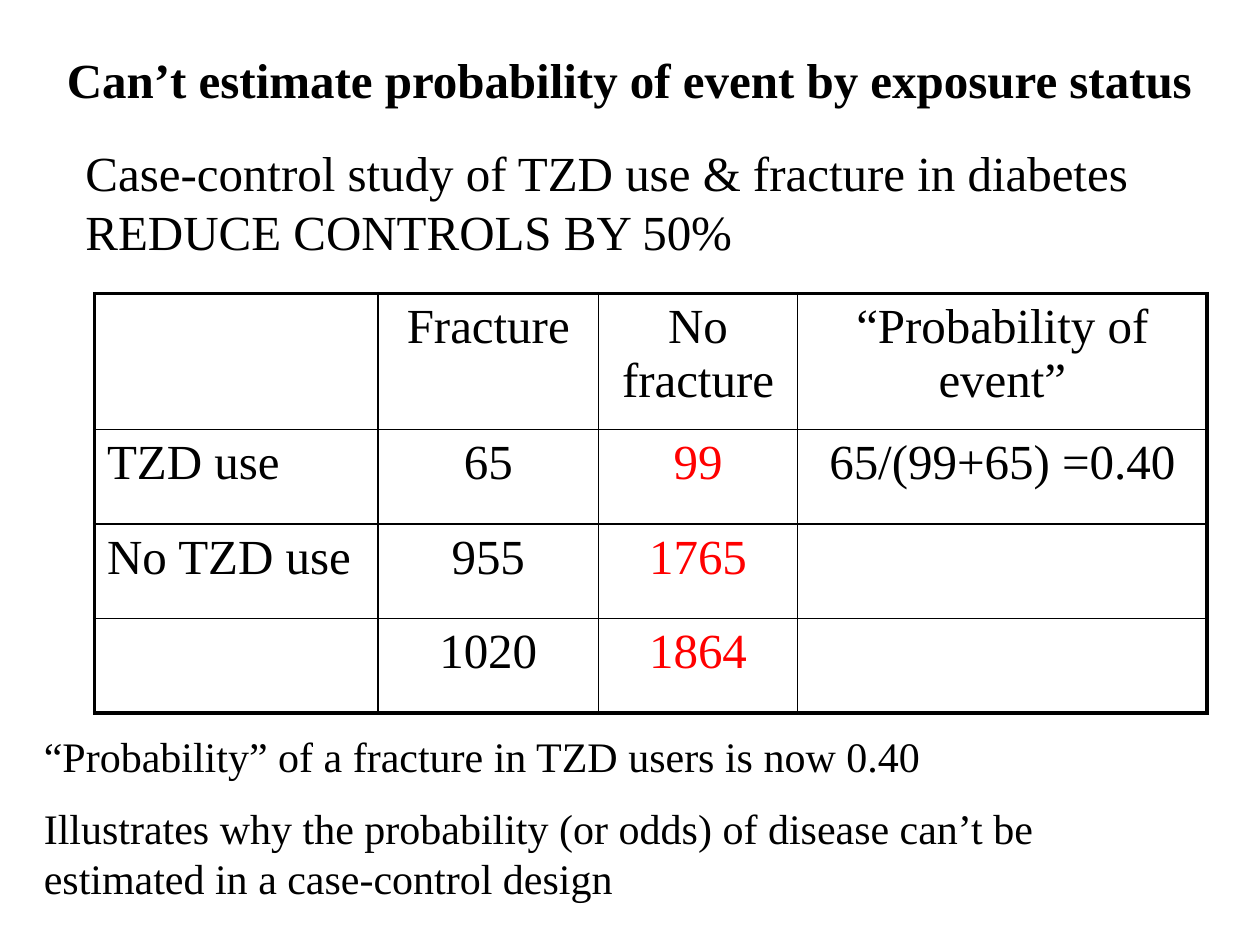
from lxml.etree import SubElement
from pptx import Presentation
from pptx.dml.color import RGBColor
from pptx.enum.text import MSO_ANCHOR, PP_ALIGN
from pptx.oxml.ns import qn
from pptx.util import Inches, Pt

FONT, BLACK, RED = "Times New Roman", "000000", "FF0000"
THIN, THICK = 1, 2.25
COLS = [2.25, 1.75, 1.58, 3.25]
ROWS = [1.08, 0.75, 0.75, 0.75]
DATA = [
    ["", "Fracture", "No fracture", "“Probability of event”"],
    ["TZD use", "65", "99", "65/(99+65) =0.40"],
    ["No TZD use", "955", "1765", ""],
    ["", "1020", "1864", ""],
]


def color(value):
    return RGBColor.from_string(value)


def write(p, text, size=28, fill=BLACK, bold=False, align=PP_ALIGN.LEFT, before=0):
    p.alignment = align
    p.space_before = Pt(before)
    r = p.add_run()
    r.text = text
    r.font.name, r.font.size, r.font.bold = FONT, Pt(size), bold
    r.font.color.rgb = color(fill)


def add_title(s, box, text):
    sp = s.shapes.title
    sp.left, sp.top, sp.width, sp.height = map(Inches, box)
    tf = sp.text_frame
    tf.vertical_anchor = MSO_ANCHOR.MIDDLE
    write(tf.paragraphs[0], text, bold=True, align=PP_ALIGN.CENTER)


def add_text(s, box, lines, size):
    tf = s.shapes.add_textbox(*map(Inches, box)).text_frame
    tf.word_wrap = True
    for i, line in enumerate(lines):
        p = tf.add_paragraph() if i else tf.paragraphs[0]
        write(p, line, size, before=size / 2 if i else 0)


def set_borders(cell, widths):
    tcPr = cell._tc.get_or_add_tcPr()
    for side, width in widths.items():
        ln = SubElement(tcPr, qn(f"a:ln{side}"), w=str(Pt(width)))
        fill = SubElement(ln, qn("a:solidFill"))
        SubElement(fill, qn("a:srgbClr"), val=BLACK)


def add_grid(s, left, top):
    size = map(Inches, (left, top, sum(COLS), sum(ROWS)))
    table = s.shapes.add_table(len(ROWS), len(COLS), *size).table
    table.first_row = table.horz_banding = False
    for col, width in zip(table.columns, COLS):
        col.width = Inches(width)
    for row, height in zip(table.rows, ROWS):
        row.height = Inches(height)

    last_row, last_col = len(ROWS) - 1, len(COLS) - 1
    for i, values in enumerate(DATA):
        for j, text in enumerate(values):
            cell = table.cell(i, j)
            # Thick frame outside, thin rules inside
            outer = {"L": j == 0, "R": j == last_col, "T": i == 0, "B": i == last_row}
            set_borders(cell, {k: THICK if edge else THIN for k, edge in outer.items()})
            cell.fill.background()
            if text:
                # The reduced control counts stand out in red
                write(cell.text_frame.paragraphs[0], text,
                      fill=RED if i and j == 2 else BLACK,
                      align=PP_ALIGN.CENTER if j else PP_ALIGN.LEFT)


def main():
    prs = Presentation()
    prs.slide_width, prs.slide_height = Inches(10), Inches(7.5)
    s = prs.slides.add_slide(prs.slide_layouts[5])

    # Heading and study description
    add_title(s, (0.08, 0, 9.83, 1.25),
              "Can’t estimate probability of event by exposure status")
    add_grid(s, 0.75, 2.33)
    add_text(s, (0.58, 1.08, 9.42, 1.03),
             ["Case-control study of TZD use & fracture in diabetes "
              "REDUCE CONTROLS BY 50%"], 28)

    # Conclusions
    add_text(s, (0.25, 5.75, 9, 1.51),
             ["“Probability” of a fracture in TZD users is now 0.40",
              "Illustrates why the probability (or odds) of disease can’t be "
              "estimated in a case-control design"], 24)
    prs.save("out.pptx")


if __name__ == "__main__":
    main()
